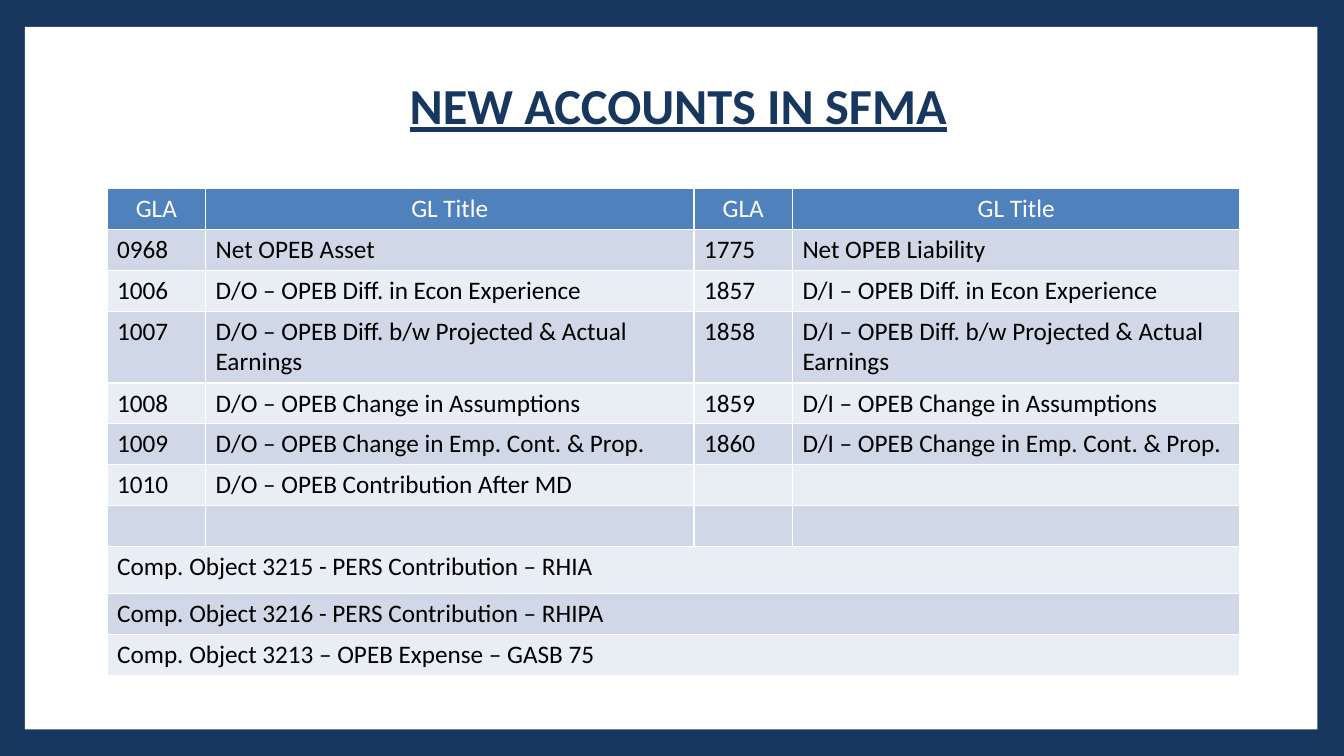
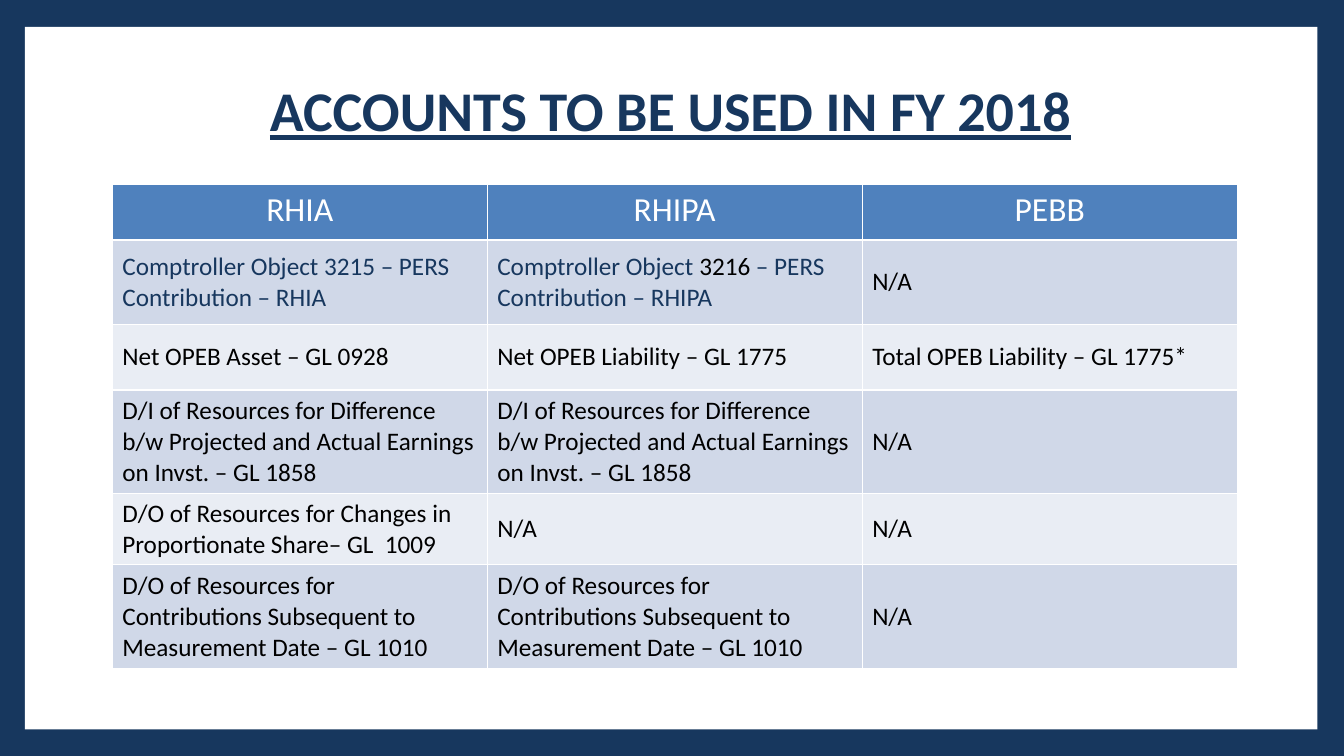
import lxml.etree
import pptx
import pptx.dml.color
import pptx.enum.shapes
import pptx.enum.text
import pptx.oxml.ns
import pptx.util

Cm = pptx.util.Cm
Pt = pptx.util.Pt
RGBColor = pptx.dml.color.RGBColor
ALIGN = pptx.enum.text.PP_ALIGN
ANCHOR = pptx.enum.text.MSO_ANCHOR

NAVY = RGBColor(0x17, 0x37, 0x5E)
HEADER_BLUE = RGBColor(0x4F, 0x81, 0xBD)
BAND_DARK = RGBColor(0xD0, 0xD8, 0xE8)
BAND_LIGHT = RGBColor(0xE9, 0xED, 0xF4)
WHITE = RGBColor(0xFF, 0xFF, 0xFF)
BLACK = RGBColor(0x00, 0x00, 0x00)


class Deck:
    """Holds the shared style and the slide being built."""

    font_name = "Calibri"
    border_width = Pt(1)

    def __init__(self):
        self.presentation = pptx.Presentation()
        self.presentation.slide_width = Cm(33.87)
        self.presentation.slide_height = Cm(19.05)
        self.slide = None

    def add_slide(self):
        """Start a slide with a navy frame around a white page."""
        self.slide = self.presentation.slides.add_slide(self.presentation.slide_layouts[6])
        background = self.slide.background.fill
        background.solid()
        background.fore_color.rgb = NAVY
        page = self.slide.shapes.add_shape(
            pptx.enum.shapes.MSO_SHAPE.RECTANGLE, Cm(0.63), Cm(0.68), Cm(32.57), Cm(17.7))
        page.shadow.inherit = False
        page.fill.solid()
        page.fill.fore_color.rgb = WHITE
        page.line.fill.background()

    def add_run(self, paragraph, text, color, **font_format):
        run = paragraph.add_run()
        run.text = text
        run.font.color.rgb = color
        for name, value in {"name": self.font_name, **font_format}.items():
            setattr(run.font, name, value)

    def add_title(self, text, left, top, width, height, size):
        box = self.slide.shapes.add_textbox(Cm(left), Cm(top), Cm(width), Cm(height))
        frame = box.text_frame
        frame.word_wrap = True
        frame.vertical_anchor = ANCHOR.MIDDLE
        paragraph = frame.paragraphs[0]
        paragraph.alignment = ALIGN.CENTER
        paragraph.line_spacing = 0.9
        self.add_run(paragraph, text, NAVY, size=Pt(size), bold=True, underline=True)

    def style_cell(self, cell, fill):
        """Fill a cell and draw white borders on its four sides."""
        cell.fill.solid()
        cell.fill.fore_color.rgb = fill
        properties = cell._tc.get_or_add_tcPr()
        qn = pptx.oxml.ns.qn
        for position, side in enumerate(("a:lnL", "a:lnR", "a:lnT", "a:lnB")):
            line = lxml.etree.Element(qn(side), w=str(self.border_width))
            solid = lxml.etree.SubElement(line, qn("a:solidFill"))
            lxml.etree.SubElement(solid, qn("a:srgbClr"), val=str(WHITE))
            properties.insert(position, line)

    def add_table(self, left, top, columns, heights, rows, header_size=18,
                  body_anchor=ANCHOR.TOP):
        """Each cell is a string or a list of (text, color); a one-cell row spans the table."""
        table = self.slide.shapes.add_table(
            len(rows), len(columns), Cm(left), Cm(top),
            Cm(sum(columns)), Cm(sum(heights))).table
        table.first_row = table.horz_banding = False
        for column, width in zip(table.columns, columns):
            column.width = Cm(width)
        for index, (height, texts) in enumerate(zip(heights, rows)):
            table.rows[index].height = Cm(height)
            is_header = index == 0
            fill = HEADER_BLUE if is_header else (BAND_LIGHT, BAND_DARK)[index % 2]
            cells = [table.cell(index, number) for number in range(len(columns))]
            for cell in cells:
                self.style_cell(cell, fill)
                cell.vertical_anchor = ANCHOR.TOP if is_header else body_anchor
            if len(texts) == 1:
                cells[0].merge(cells[-1])
            for cell, content in zip(cells, texts):
                if not content:
                    continue
                paragraph = cell.text_frame.paragraphs[0]
                paragraph.alignment = ALIGN.CENTER if is_header else ALIGN.LEFT
                if isinstance(content, str):
                    content = [(content, WHITE if is_header else BLACK)]
                for text, color in content:
                    self.add_run(paragraph, text, color,
                                 size=Pt(header_size if is_header else 18))


def build_new_accounts(deck):
    deck.add_slide()
    deck.add_title("NEW ACCOUNTS IN SFMA", 2.31, 1.17, 29.57, 3.12, 36)
    line, tall_line = 1.03, 1.81
    deck.add_table(
        2.7, 4.75, [2.48, 12.31, 2.48, 11.28],
        [line] * 3 + [tall_line] + [line] * 4 + [1.19] + [line] * 2,
        [
            ["GLA", "GL Title", "GLA", "GL Title"],
            ["0968", "Net OPEB Asset", "1775", "Net OPEB Liability"],
            ["1006", "D/O – OPEB Diff. in Econ Experience",
             "1857", "D/I – OPEB Diff. in Econ Experience"],
            ["1007", "D/O – OPEB Diff. b/w Projected & Actual Earnings",
             "1858", "D/I – OPEB Diff. b/w Projected & Actual Earnings"],
            ["1008", "D/O – OPEB Change in Assumptions",
             "1859", "D/I – OPEB Change in Assumptions"],
            ["1009", "D/O – OPEB Change in Emp. Cont. & Prop.",
             "1860", "D/I – OPEB Change in Emp. Cont. & Prop."],
            ["1010", "D/O – OPEB Contribution After MD", "", ""],
            ["", "", "", ""],
            ["Comp. Object 3215 - PERS Contribution – RHIA"],
            ["Comp. Object 3216 - PERS Contribution – RHIPA"],
            ["Comp. Object 3213 – OPEB Expense – GASB 75"],
        ])


def build_accounts_to_use(deck):
    deck.add_slide()
    deck.add_title("ACCOUNTS TO BE USED IN FY 2018", 3.18, 1.55, 27.43, 2.62, 40)
    earnings = ("D/I of Resources for Difference b/w Projected and Actual Earnings "
                "on Invst. – GL 1858")
    contributions = ("D/O of Resources for Contributions Subsequent to "
                     "Measurement Date – GL 1010")
    not_used = "N/A"
    deck.add_table(
        2.83, 4.65, [9.45] * 3, [1.4, 2.13, 1.65, 2.6, 1.8, 2.62],
        [
            ["RHIA", "RHIPA", "PEBB"],
            [[("Comptroller Object 3215 – PERS Contribution – RHIA", NAVY)],
             [("Comptroller Object ", NAVY), ("3216", BLACK),
              (" – PERS Contribution – RHIPA", NAVY)],
             not_used],
            ["Net OPEB Asset – GL 0928", "Net OPEB Liability – GL 1775",
             "Total OPEB Liability – GL 1775*"],
            [earnings, earnings, not_used],
            ["D/O of Resources for Changes in Proportionate Share– GL  1009",
             not_used, not_used],
            [contributions, contributions, not_used],
        ],
        header_size=24, body_anchor=ANCHOR.MIDDLE)


def main():
    deck = Deck()
    build_new_accounts(deck)
    build_accounts_to_use(deck)
    deck.presentation.save("out.pptx")


if __name__ == "__main__":
    main()
